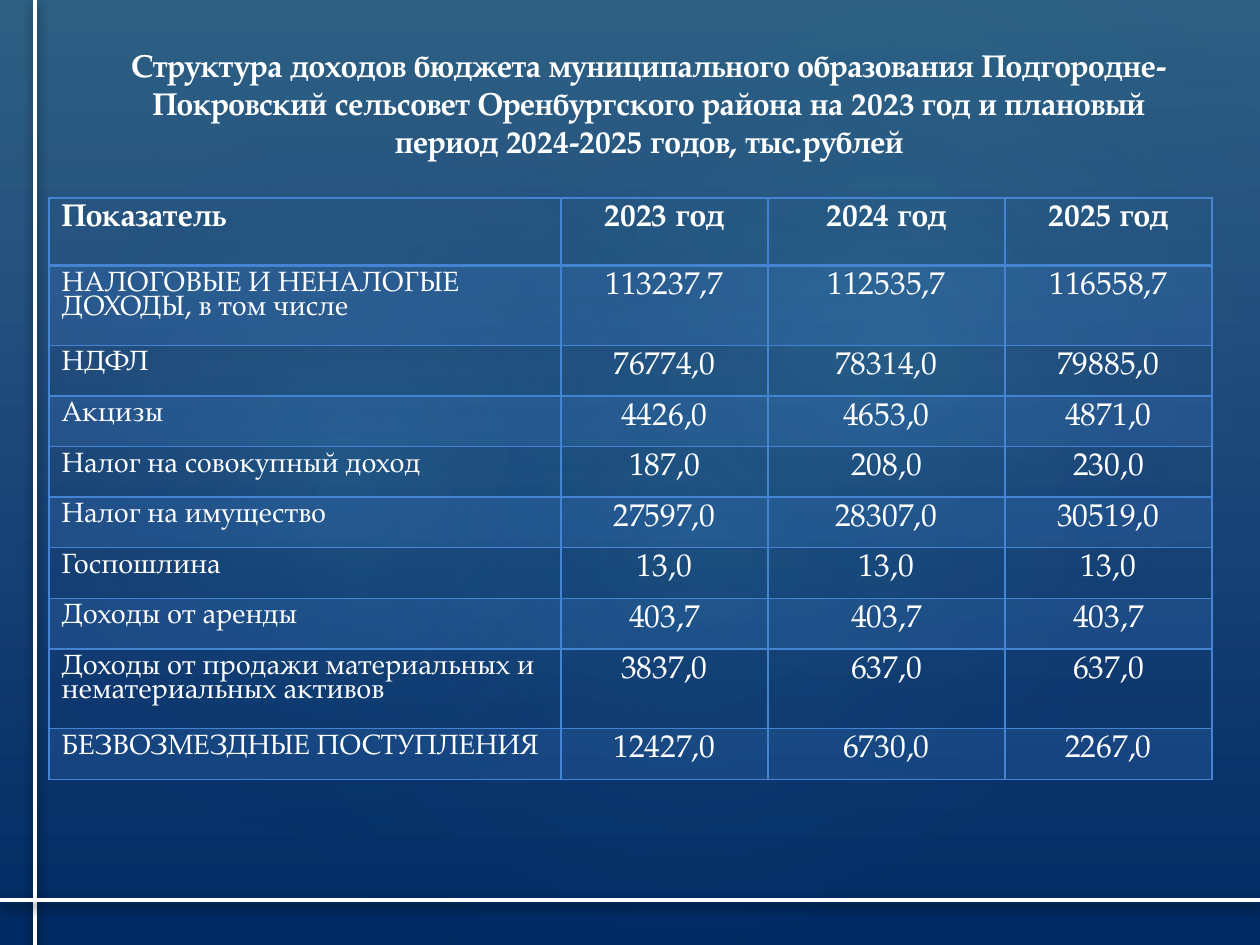
from dataclasses import dataclass

from lxml import etree
from pptx import Presentation
from pptx import util as u
from pptx.dml.color import RGBColor
from pptx.enum import shapes, text
from pptx.oxml import ns

COLOURS = {
    "white": "FFFFFF", "black": "000000", "grid": "4584D3",
    "sky": "455890", "navy": "00295F", "teal": "03706E",
    "blue": "073E87", "glow": "5AFBF8",
}
FONT = "TeX Gyre Pagella"
WIDTH, HEIGHT = 25.4, 19.05
TITLE = (
    "Структура доходов бюджета муниципального образования "
    "Подгородне-Покровский сельсовет Оренбургского района "
    "на 2023 год и плановый период 2024-2025 годов, тыс.рублей"
)
COLUMN_WIDTHS = (10.32, 4.17, 4.78, 4.17)
HEADER = ("Показатель", "2023 год", "2024 год", "2025 год")


@dataclass(frozen=True)
class Stop:
    position: int
    colour: str
    opacity: int = 100


@dataclass(frozen=True)
class Glow:
    left: float
    top: float
    width: float
    height: float
    rotation: float
    opacity: int


@dataclass(frozen=True)
class Rule:
    start: tuple[float, float]
    end: tuple[float, float]


@dataclass(frozen=True)
class Income:
    label: str
    values: tuple[str, str, str]
    height: float = 1.28


GLOWS = (
    Glow(3.81, 2.9, 20.12, 15.85, 328.7, 7),
    Glow(-0.76, 3.25, 15.39, 12.45, 294.3, 8),
    Glow(9.09, 0.33, 18.01, 13.21, 328.7, 8),
)
RULES = (
    Rule((0.71, 0), (0.71, HEIGHT)),
    Rule((0, 18.14), (WIDTH, 18.14)),
)
INCOMES = (
    Income("НАЛОГОВЫЕ И НЕНАЛОГЫЕ ДОХОДЫ, в том числе",
           ("113237,7", "112535,7", "116558,7"), 1.61),
    Income("НДФЛ", ("76774,0", "78314,0", "79885,0"), 1.02),
    Income("Акцизы", ("4426,0", "4653,0", "4871,0"), 1.02),
    Income("Налог на совокупный доход", ("187,0", "208,0", "230,0"), 1.02),
    Income("Налог на имущество", ("27597,0", "28307,0", "30519,0"), 1.02),
    Income("Госпошлина", ("13,0", "13,0", "13,0"), 1.02),
    Income("Доходы от аренды", ("403,7", "403,7", "403,7"), 1.02),
    Income("Доходы от продажи материальных и нематериальных активов",
           ("3837,0", "637,0", "637,0"), 1.61),
    Income("БЕЗВОЗМЕЗДНЫЕ ПОСТУПЛЕНИЯ", ("12427,0", "6730,0", "2267,0"), 1.02),
)


def rgb(name: str) -> RGBColor:
    return RGBColor.from_string(COLOURS[name])


def add_node(parent, tag: str, **attributes):
    node = etree.SubElement(parent, ns.qn(tag))
    for name, value in attributes.items():
        node.set(name, str(value))
    return node


def add_colour(parent, name: str, opacity: int = 100) -> None:
    colour = add_node(parent, "a:srgbClr", val=COLOURS[name])
    if opacity < 100:
        add_node(colour, "a:alpha", val=opacity * 1000)


def set_gradient(owner, stops: tuple[Stop, ...], radial: bool = False) -> None:
    solid = owner.find(ns.qn("a:solidFill"))
    gradient = etree.Element(ns.qn("a:gradFill"), rotWithShape="1")
    stop_list = add_node(gradient, "a:gsLst")
    for stop in stops:
        node = add_node(stop_list, "a:gs", pos=stop.position * 1000)
        add_colour(node, stop.colour, stop.opacity)
    if radial:
        circle = add_node(gradient, "a:path", path="circle")
        add_node(circle, "a:fillToRect", l=50000, t=50000, r=50000, b=50000)
    else:
        add_node(gradient, "a:lin", ang=5400000, scaled=0)
    owner.replace(solid, gradient)


def add_gradient_shape(page, kind, place: tuple, stops: tuple[Stop, ...],
                       rotation: float = 0, radial: bool = False) -> None:
    shape = page.shapes.add_shape(kind, *map(u.Cm, place))
    shape.rotation = rotation
    shape.shadow.inherit = False
    shape.line.fill.background()
    shape.fill.solid()
    set_gradient(shape._element.spPr, stops, radial)


def add_background(page) -> None:
    page.background.fill.solid()
    owner = page._element.find(".//" + ns.qn("p:bgPr"))
    set_gradient(owner, (Stop(0, "sky"), Stop(100, "navy")))
    add_gradient_shape(page, shapes.MSO_SHAPE.RECTANGLE, (0, 0, WIDTH, HEIGHT),
                       (Stop(0, "teal", 36), Stop(100, "blue", 10)))
    for glow in GLOWS:
        add_gradient_shape(
            page, shapes.MSO_SHAPE.OVAL,
            (glow.left, glow.top, glow.width, glow.height),
            (Stop(0, "glow", glow.opacity), Stop(58, "blue", 0)),
            glow.rotation, radial=True)


def add_rule(page, rule: Rule) -> None:
    line = page.shapes.add_connector(
        shapes.MSO_CONNECTOR.STRAIGHT, *map(u.Cm, rule.start + rule.end))
    line.line.color.rgb = rgb("white")
    line.line.width = u.Pt(2.25)
    effects = add_node(line._element.spPr, "a:effectLst")
    shadow = add_node(effects, "a:outerShdw", blurRad=u.Pt(6), dist=u.Pt(3),
                      dir=5400000, rotWithShape=0)
    add_colour(shadow, "black", 60)


def write(frame, content: str, size: int, bold: bool = False,
          centred: bool = True, spacing: float = 1.0) -> None:
    para = frame.paragraphs[0]
    para.alignment = text.PP_ALIGN.CENTER if centred else text.PP_ALIGN.LEFT
    para.line_spacing = spacing
    span = para.add_run()
    span.text = content
    formats = {"name": FONT, "size": u.Pt(size), "bold": bold}
    for name, value in formats.items():
        setattr(span.font, name, value)
    span.font.color.rgb = rgb("white")


def add_title(page) -> None:
    box = page.shapes.add_textbox(*map(u.Cm, (2.18, 0.79, 21.82, 2.57)))
    box.text_frame.word_wrap = True
    box.text_frame.vertical_anchor = text.MSO_ANCHOR.MIDDLE
    write(box.text_frame, TITLE, 18, bold=True)


def style_cell(cell, filled: bool, header: bool, below_header: bool) -> None:
    if filled:
        cell.fill.solid()
        cell.fill.fore_color.rgb = rgb("grid")
    else:
        cell.fill.background()
    properties = cell._tc.get_or_add_tcPr()
    if filled:
        add_node(properties.find(".//" + ns.qn("a:srgbClr")), "a:alpha", val=20000)
    thick = {"a:lnB"} if header else {"a:lnT"} if below_header else set()
    for index, tag in enumerate(("a:lnL", "a:lnR", "a:lnT", "a:lnB")):
        border = etree.Element(ns.qn(tag), w=str(u.Pt(2 if tag in thick else 1)))
        add_colour(add_node(border, "a:solidFill"), "grid")
        properties.insert(index, border)


def add_income_table(page) -> None:
    rows = (Income(HEADER[0], HEADER[1:], 1.36),) + INCOMES
    size = (sum(COLUMN_WIDTHS), sum(row.height for row in rows))
    table = page.shapes.add_table(
        len(rows), len(COLUMN_WIDTHS), *map(u.Cm, (0.99, 3.99) + size)).table
    table.first_row = table.horz_banding = False
    for column, width in zip(table.columns, COLUMN_WIDTHS):
        column.width = u.Cm(width)
    for index, row in enumerate(rows):
        table.rows[index].height = u.Cm(row.height)
        header = index == 0
        for position, content in enumerate((row.label, *row.values)):
            cell = table.cell(index, position)
            label = position == 0
            body_label = label and not header
            style_cell(cell, index % 2 == 1, header, index == 1)
            write(cell.text_frame, content, 16 if body_label else 18, header,
                  not label, 0.86 if body_label else 1.0)


def main() -> None:
    deck = Presentation()
    deck.slide_width, deck.slide_height = u.Cm(WIDTH), u.Cm(HEIGHT)
    page = deck.slides.add_slide(deck.slide_layouts[6])
    add_background(page)
    for rule in RULES:
        add_rule(page, rule)
    add_title(page)
    add_income_table(page)
    deck.save("out.pptx")


if __name__ == "__main__":
    main()
